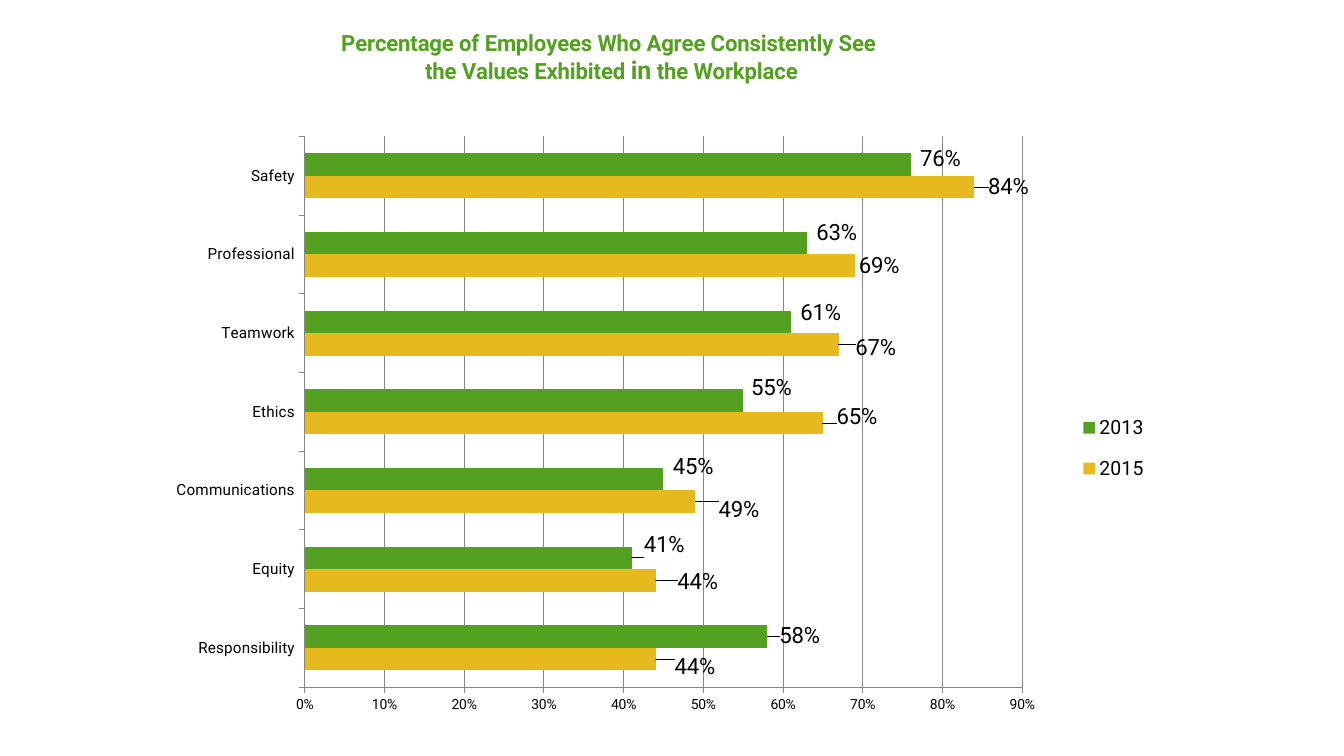
from pptx import Presentation
from pptx.chart.data import CategoryChartData
from pptx.dml.color import RGBColor
from pptx.enum.chart import XL_CHART_TYPE, XL_LABEL_POSITION, XL_LEGEND_POSITION, XL_TICK_MARK
from pptx.oxml import parse_xml
from pptx.oxml.ns import nsdecls, qn
from pptx.util import Pt

BAR = XL_CHART_TYPE.BAR_CLUSTERED
OUTSIDE_END = XL_LABEL_POSITION.OUTSIDE_END
RIGHT = XL_LEGEND_POSITION.RIGHT
TICK_OUT = XL_TICK_MARK.OUTSIDE

THEME = {
    "font": "Roboto",
    "black": RGBColor(0x00, 0x00, 0x00),
    "green": RGBColor(0x54, 0xA0, 0x21),
    "gold": RGBColor(0xE6, 0xB9, 0x1E),
    "grid": RGBColor(0x86, 0x86, 0x86),
    "base_size": Pt(10),
    "category_size": Pt(11),
    "legend_size": Pt(14),
    "label_size": Pt(16),
    "title_size": Pt(16),
    "title_accent_size": Pt(18),
}

CHART_W, CHART_H = 708, 528
CATEGORIES = ["Responsibility", "Equity", "Communications", "Ethics",
              "Teamwork", "Professional", "Safety"]
# Year, colour, values, label shifts from the bar end in points
SERIES = [
    ("2015", "gold", [0.44, 0.44, 0.49, 0.65, 0.67, 0.69, 0.84],
     [(11, 6), (13, 1), (14, 6), (7, -4), (9, 3), None, (7, 0)]),
    ("2013", "green", [0.58, 0.41, 0.45, 0.55, 0.61, 0.63, 0.76],
     [(6, 0), (6, -9), (4, -9), (3, -9), (4, -6), (4, -7), (4, -4)]),
]
TITLE = [
    [("Percentage of Employees Who Agree Consistently See ", "title_size")],
    [("the Values Exhibited ", "title_size"), ("in", "title_accent_size"),
     (" the Workplace", "title_size")],
]


def set_layout(parent, index, modes, **fractions):
    """Give a chart part a manual layout as fractions of the chart."""
    old = parent.find(qn("c:layout"))
    if old is not None:
        parent.remove(old)
    sizes = "".join(f'<c:{k} val="{v:.4f}"/>' for k, v in fractions.items())
    parent.insert(index, parse_xml(
        f'<c:layout {nsdecls("c")}><c:manualLayout>{modes}{sizes}'
        '</c:manualLayout></c:layout>'))


def set_font(font, size, color="black"):
    font.name = THEME["font"]
    font.size = THEME[size]
    font.color.rgb = THEME[color]


prs = Presentation()
prs.slide_width, prs.slide_height = Pt(960), Pt(540)
s = prs.slides.add_slide(prs.slide_layouts[6])

# Chart
data = CategoryChartData(number_format="0%")
data.categories = CATEGORIES
for year, _, values, _ in SERIES:
    data.add_series(year, values)
chart = s.shapes.add_chart(BAR, Pt(126), Pt(12), Pt(CHART_W), Pt(CHART_H), data).chart
set_font(chart.font, "base_size")
EDGES = '<c:xMode val="edge"/><c:yMode val="edge"/>'
set_layout(chart._chartSpace.chart.plotArea, 0, '<c:layoutTarget val="inner"/>' + EDGES,
           x=0.121, y=0.162, w=0.731, h=0.745)

# Title
chart.has_title = True
title = chart.chart_title
tf = title.text_frame
for i, runs in enumerate(TITLE):
    p = tf.add_paragraph() if i else tf.paragraphs[0]
    for text, size in runs:
        r = p.add_run()
        r.text = text
        set_font(r.font, size, "green")
        r.font.bold = True
title.include_in_layout = True
set_layout(title._element, 1, EDGES, x=0.155, y=0.013)

# Axes
cat_axis, val_axis = chart.category_axis, chart.value_axis
for axis in (cat_axis, val_axis):
    axis.major_tick_mark = TICK_OUT
    axis.format.line.color.rgb = THEME["grid"]
    axis.format.line.width = Pt(0.75)
set_font(cat_axis.tick_labels.font, "category_size")
set_font(val_axis.tick_labels.font, "base_size")
val_axis.minimum_scale, val_axis.maximum_scale, val_axis.major_unit = 0, 0.9, 0.1
val_axis.tick_labels.number_format = "0%"
val_axis.tick_labels.number_format_is_linked = False
val_axis.has_major_gridlines = True
val_axis.major_gridlines.format.line.color.rgb = THEME["grid"]
val_axis.major_gridlines.format.line.width = Pt(0.75)

# Bars and their labels
plot = chart.plots[0]
plot.gap_width = 150
plot.overlap = 0
plot.vary_by_categories = False
for series, (_, color, _, shifts) in zip(plot.series, SERIES):
    series.format.fill.solid()
    series.format.fill.fore_color.rgb = THEME[color]
    series.invert_if_negative = False
    labels = series.data_labels
    labels.show_value = True
    labels.number_format = "0%"
    labels.number_format_is_linked = False
    labels.position = OUTSIDE_END
    set_font(labels.font, "label_size")
    moved = [(i, shift) for i, shift in enumerate(shifts) if shift]
    for i, _ in moved:
        label = series.points[i].data_label
        label.position = OUTSIDE_END
        set_font(label.font, "label_size")
    for (_, (dx, dy)), element in zip(moved, series._element.xpath("c:dLbls/c:dLbl")):
        set_layout(element, 1, "", x=dx / CHART_W, y=dy / CHART_H)

# Legend
chart.has_legend = True
legend = chart.legend
legend.position = RIGHT
legend.include_in_layout = False
set_font(legend.font, "legend_size")
set_layout(legend._element, 1, EDGES, x=0.9, y=0.517, w=0.09, h=0.133)

prs.save("out.pptx")
